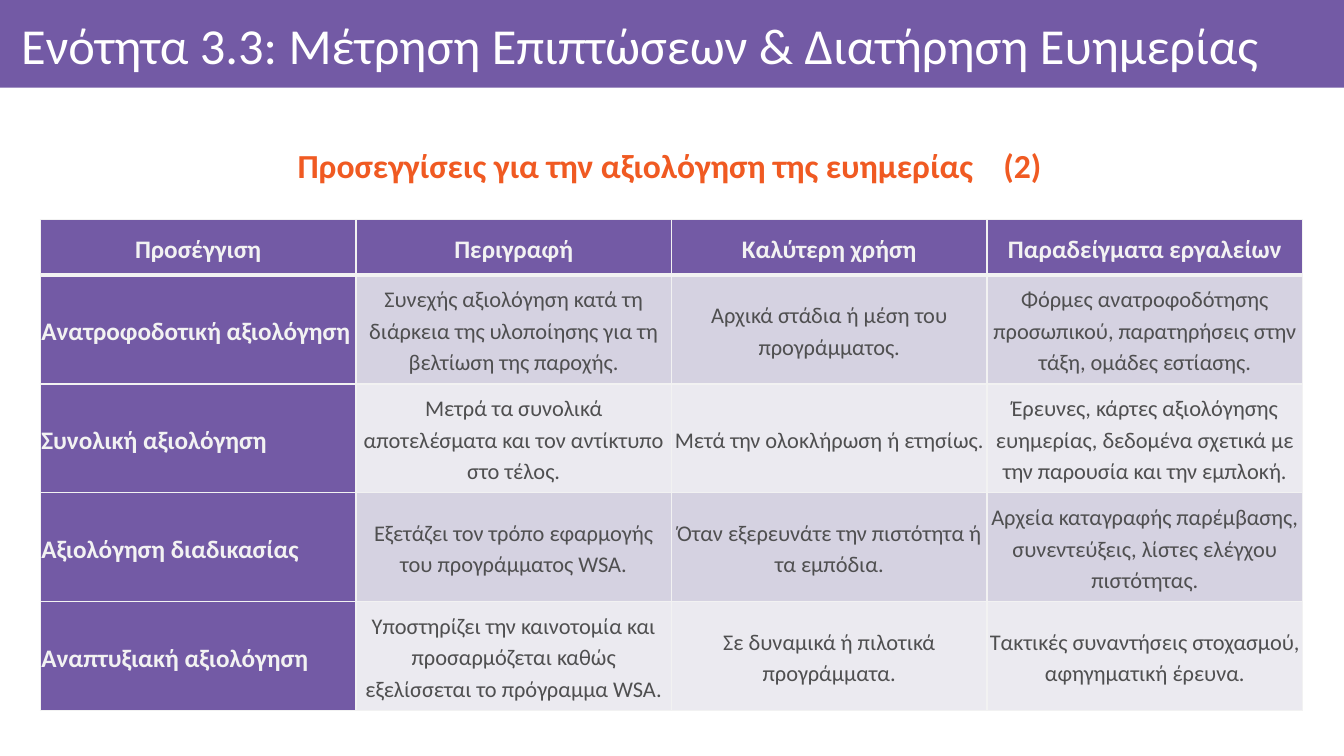
from dataclasses import dataclass

from lxml.etree import SubElement
from pptx import Presentation
from pptx.dml.color import RGBColor
from pptx.enum.shapes import MSO_SHAPE as Preset
from pptx.enum.text import MSO_ANCHOR as Anchor, MSO_AUTO_SIZE as AutoSize, PP_ALIGN as Align
from pptx.oxml import parse_xml
from pptx.oxml.ns import nsdecls, qn
from pptx.util import Emu, Pt

PURPLE = RGBColor(0x73, 0x5A, 0xA5)
ORANGE = RGBColor(0xF0, 0x5A, 0x22)
WHITE = RGBColor(0xFF, 0xFF, 0xFF)
OFF_WHITE = RGBColor(0xF2, 0xF2, 0xF2)
GREY = RGBColor(0x4F, 0x4F, 0x50)
LILAC = RGBColor(0xD5, 0xD2, 0xE1)
PALE_LILAC = RGBColor(0xEB, 0xEA, 0xF0)

FONT = "Calibri"
EMU_PER_PX = 9144  # 100 px to the inch


@dataclass(frozen=True)
class Box:
    left: int
    top: int
    width: int
    height: int

    def emu(self) -> tuple[Emu, Emu, Emu, Emu]:
        return px(self.left), px(self.top), px(self.width), px(self.height)


@dataclass(frozen=True)
class TextStyle:
    size: int
    color: RGBColor
    bold: bool
    align: Align
    line_spacing: float
    space_after: int = 0


@dataclass(frozen=True)
class Approach:
    name: str
    description: str
    best_use: str
    tools: str

    def texts(self) -> tuple[str, str, str, str]:
        return self.name, self.description, self.best_use, self.tools


SLIDE_WIDTH, SLIDE_HEIGHT = 1333, 750
BAND = Box(0, 0, SLIDE_WIDTH, 87)
TITLE = Box(11, 9, 1306, 78)
SUBTITLE = Box(11, 136, 1306, 60)
TABLE = Box(40, 218, 1252, 487)
HEADER_HEIGHT, ROW_HEIGHT = 55, 108
CELL_MARGIN = 1

TITLE_STYLE = TextStyle(36, WHITE, False, Align.LEFT, 0.9)
SUBTITLE_STYLE = TextStyle(24, ORANGE, True, Align.CENTER, 0.9)
HEADER_STYLE = TextStyle(18, OFF_WHITE, True, Align.CENTER, 1.15, 8)
NAME_STYLE = TextStyle(18, OFF_WHITE, True, Align.LEFT, 1.15, 8)
DETAIL_STYLE = TextStyle(16, GREY, False, Align.CENTER, 1.15, 8)

ROWS = [
    Approach("Προσέγγιση", "Περιγραφή", "Καλύτερη χρήση", "Παραδείγματα εργαλείων"),
    Approach(
        "Ανατροφοδοτική αξιολόγηση",
        "Συνεχής αξιολόγηση κατά τη διάρκεια της υλοποίησης για τη βελτίωση της παροχής.",
        "Αρχικά στάδια ή μέση του προγράμματος.",
        "Φόρμες ανατροφοδότησης προσωπικού, παρατηρήσεις στην τάξη, ομάδες εστίασης.",
    ),
    Approach(
        "Συνολική αξιολόγηση",
        "Μετρά τα συνολικά αποτελέσματα και τον αντίκτυπο στο τέλος.",
        "Μετά την ολοκλήρωση ή ετησίως.",
        "Έρευνες, κάρτες αξιολόγησης ευημερίας, δεδομένα σχετικά με την παρουσία και την εμπλοκή.",
    ),
    Approach(
        "Αξιολόγηση διαδικασίας",
        "Εξετάζει τον τρόπο εφαρμογής του προγράμματος WSA.",
        "Όταν εξερευνάτε την πιστότητα ή τα εμπόδια.",
        "Αρχεία καταγραφής παρέμβασης, συνεντεύξεις, λίστες ελέγχου πιστότητας.",
    ),
    Approach(
        "Αναπτυξιακή αξιολόγηση",
        "Υποστηρίζει την καινοτομία και προσαρμόζεται καθώς εξελίσσεται το πρόγραμμα WSA.",
        "Σε δυναμικά ή πιλοτικά προγράμματα.",
        "Τακτικές συναντήσεις στοχασμού, αφηγηματική έρευνα.",
    ),
]


def px(length: int) -> Emu:
    return Emu(length * EMU_PER_PX)


def write(text_frame, text: str, style: TextStyle) -> None:
    text_frame.text = text
    paragraph = text_frame.paragraphs[0]
    paragraph.alignment = style.align
    paragraph.line_spacing = style.line_spacing
    paragraph.space_before = Pt(0)
    paragraph.space_after = Pt(style.space_after)
    font = paragraph.font
    font.name, font.size, font.bold = FONT, Pt(style.size), style.bold
    font.color.rgb = style.color


def set_margins(target, left: int, top: int, right: int, bottom: int) -> None:
    target.margin_left, target.margin_top = px(left), px(top)
    target.margin_right, target.margin_bottom = px(right), px(bottom)


def fill_placeholder(placeholder, box: Box, text: str, style: TextStyle,
                     margins: tuple[int, int, int, int]) -> None:
    placeholder.left, placeholder.top, placeholder.width, placeholder.height = box.emu()
    text_frame = placeholder.text_frame
    text_frame.word_wrap = True
    text_frame.auto_size = AutoSize.NONE
    text_frame.vertical_anchor = Anchor.MIDDLE
    set_margins(text_frame, *margins)
    write(text_frame, text, style)


def remove_bullet(paragraph) -> None:
    properties = paragraph._p.get_or_add_pPr()
    properties.set("marL", "0")
    properties.set("indent", "0")
    SubElement(properties, qn("a:buNone"))


def set_borders(cell, top: int, bottom: int) -> None:
    properties = cell._tc.get_or_add_tcPr()
    widths = {"lnL": 1, "lnR": 1, "lnT": top, "lnB": bottom}
    for position, (side, width) in enumerate(widths.items()):
        properties.insert(position, parse_xml(
            f'<a:{side} {nsdecls("a")} w="{Pt(width)}"><a:solidFill>'
            f'<a:srgbClr val="{OFF_WHITE}"/></a:solidFill></a:{side}>'))


def add_band(slide) -> None:
    band = slide.shapes.add_shape(Preset.RECTANGLE, *BAND.emu())
    band.shadow.inherit = False
    band.fill.solid()
    band.fill.fore_color.rgb = PURPLE
    band.line.fill.background()
    slide.shapes._spTree.insert(2, band._element)  # behind the title


def add_approach_table(slide) -> None:
    column_count = len(ROWS[0].texts())
    table = slide.shapes.add_table(len(ROWS), column_count, *TABLE.emu()).table
    for column in table.columns:
        column.width = px(TABLE.width // column_count)
    for row_index, approach in enumerate(ROWS):
        is_header = row_index == 0
        table.rows[row_index].height = px(HEADER_HEIGHT if is_header else ROW_HEIGHT)
        for column_index, text in enumerate(approach.texts()):
            if is_header:
                style, color = HEADER_STYLE, PURPLE
            elif column_index == 0:
                style, color = NAME_STYLE, PURPLE
            else:
                style, color = DETAIL_STYLE, LILAC if row_index % 2 else PALE_LILAC
            cell = table.cell(row_index, column_index)
            cell.vertical_anchor = Anchor.MIDDLE
            set_margins(cell, *[CELL_MARGIN] * 4)
            cell.fill.solid()
            cell.fill.fore_color.rgb = color
            set_borders(cell, top=3 if row_index == 1 else 1, bottom=3 if is_header else 1)
            write(cell.text_frame, text, style)


def main() -> None:
    presentation = Presentation()
    presentation.slide_width, presentation.slide_height = px(SLIDE_WIDTH), px(SLIDE_HEIGHT)
    slide = presentation.slides.add_slide(presentation.slide_layouts[1])

    # Title band and headings
    add_band(slide)
    fill_placeholder(slide.shapes.title, TITLE,
                     "Ενότητα 3.3: Μέτρηση Επιπτώσεων & Διατήρηση Ευημερίας",
                     TITLE_STYLE, (10, 6, 6, 6))
    subtitle = slide.placeholders[1]
    fill_placeholder(subtitle, SUBTITLE,
                     "Προσεγγίσεις για την αξιολόγηση της ευημερίας \t(2)",
                     SUBTITLE_STYLE, (10, 5, 10, 5))
    remove_bullet(subtitle.text_frame.paragraphs[0])

    # Evaluation approaches
    add_approach_table(slide)
    presentation.save("out.pptx")


if __name__ == "__main__":
    main()
